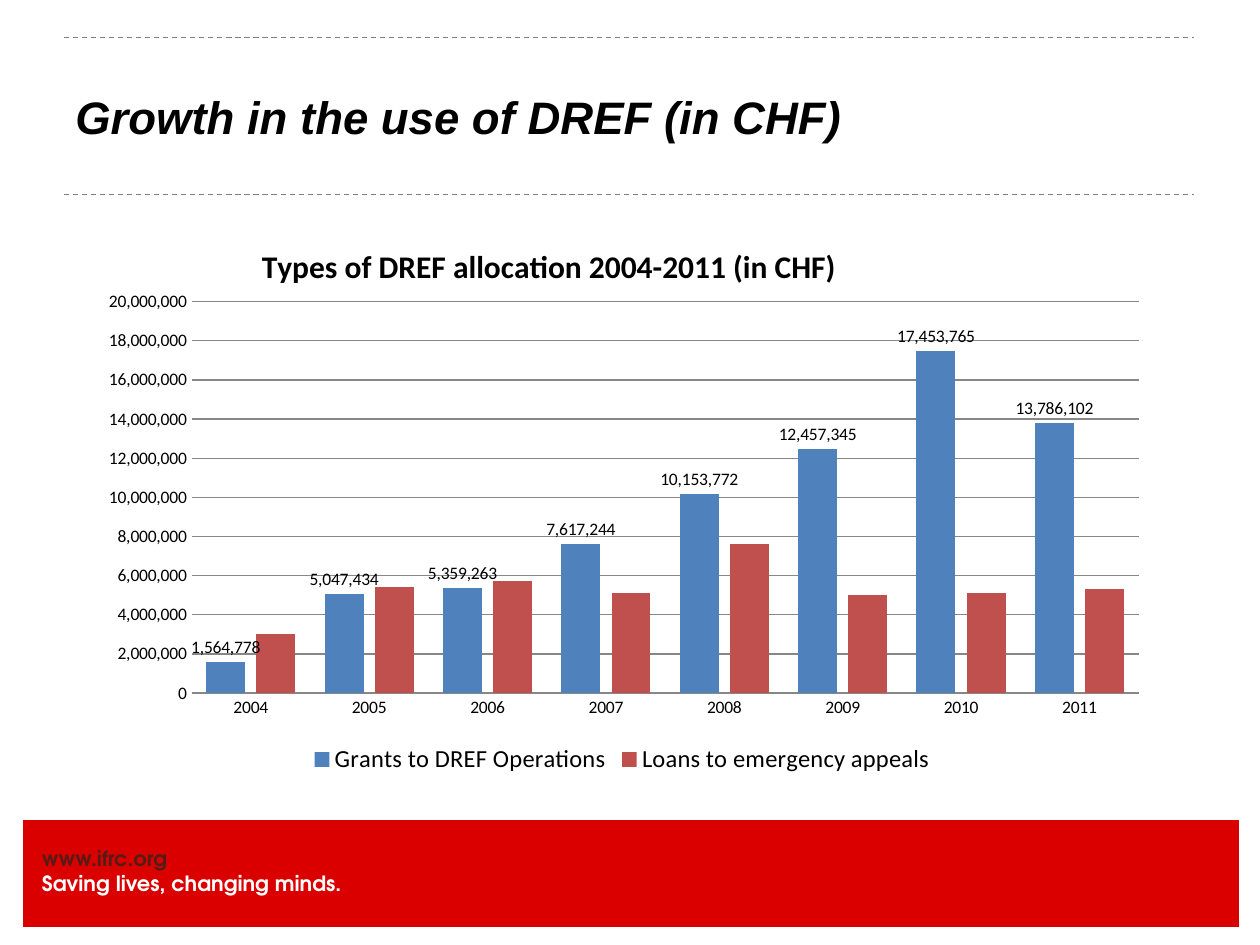
from lxml import etree
from pptx import Presentation, util as u
from pptx.chart.data import CategoryChartData
from pptx.dml.color import RGBColor
from pptx.enum import chart as charts, dml, shapes, text
from pptx.oxml.ns import qn

COLOURS = {
    "black": "000000", "white": "FFFFFF", "grey": "808080", "axis": "878787",
    "red": "DB0000", "brown": "551C15", "grants": "4F81BD", "loans": "C0504D",
}
YEARS = [str(year) for year in range(2004, 2012)]
GRANTS = [1564778, 5047434, 5359263, 7617244, 10153772, 12457345, 17453765, 13786102]
LOANS = [3000000, 5400000, 5700000, 5100000, 7600000, 5000000, 5100000, 5300000]


def colour(name):
    return RGBColor.from_string(COLOURS[name])


def points(*lengths):
    return [u.Pt(length) for length in lengths]


def format_font(font, size, face="Calibri", ink="black", bold=False, italic=False):
    font.size, font.name = u.Pt(size), face
    font.bold, font.italic = bold, italic
    font.color.rgb = colour(ink)


def write(para, content, **style):
    span = para.add_run()
    span.text = content
    format_font(span.font, **style)


def place(element, **fractions):
    """Fix a chart part at fractions of the chart area; x, y and optionally w, h."""
    layout = element.find(qn("c:layout"))
    if layout is None:
        layout = etree.Element(qn("c:layout"))
        # The layout follows the title's text, but comes first in the plot area.
        element.insert(1 if element.tag == qn("c:title") else 0, layout)
    for child in list(layout):
        layout.remove(child)
    manual = etree.SubElement(layout, qn("c:manualLayout"))
    if "w" in fractions:
        etree.SubElement(manual, qn("c:layoutTarget")).set("val", "inner")
    for side in "xy":
        etree.SubElement(manual, qn(f"c:{side}Mode")).set("val", "edge")
    for key, value in fractions.items():
        etree.SubElement(manual, qn(f"c:{key}")).set("val", str(value))


class SlideMaker:
    def __init__(self, slide):
        self.slide = slide

    def band(self, left, top, width, height):
        box = self.slide.shapes.add_shape(
            shapes.MSO_SHAPE.RECTANGLE, *points(left, top, width, height))
        box.shadow.inherit = False
        box.fill.solid()
        box.fill.fore_color.rgb = colour("red")
        box.line.color.rgb = colour("white")
        box.line.width = u.Pt(0.75)

    def rule(self, left, right, top):
        line = self.slide.shapes.add_connector(
            shapes.MSO_CONNECTOR.STRAIGHT, *points(left, top, right, top))
        line.line.color.rgb = colour("grey")
        line.line.width = u.Pt(0.75)
        line.line.dash_style = dml.MSO_LINE.DASH
        etree.SubElement(line._element.spPr, qn("a:effectLst"))

    def text(self, left, top, width, height, lines, inset=0, middle=False):
        """Add a text box; each line is a pair of wording and font style."""
        box = self.slide.shapes.add_textbox(*points(left, top, width, height))
        frame = box.text_frame
        frame.word_wrap = True
        frame.margin_left = frame.margin_right = u.Pt(inset)
        frame.margin_top = frame.margin_bottom = u.Pt(inset / 2)
        if middle:
            frame.vertical_anchor = text.MSO_ANCHOR.MIDDLE
        for index, (content, style) in enumerate(lines):
            para = frame.add_paragraph() if index else frame.paragraphs[0]
            write(para, content, **style)

    def column_chart(self, left, top, width, height, title, years, series):
        """Add clustered columns; series maps a name to values and a colour name."""
        data = CategoryChartData(number_format="#,##0")
        data.categories = years
        for name, (values, _) in series.items():
            data.add_series(name, values)
        chart = self.slide.shapes.add_chart(
            charts.XL_CHART_TYPE.COLUMN_CLUSTERED,
            *points(left, top, width, height), data).chart
        format_font(chart.font, 10)

        write(chart.chart_title.text_frame.paragraphs[0], title, size=18, bold=True)
        chart.chart_title.include_in_layout = False
        chart.has_legend = True
        chart.legend.position = charts.XL_LEGEND_POSITION.BOTTOM
        chart.legend.include_in_layout = False
        format_font(chart.legend.font, 14)

        plot = chart.plots[0]
        plot.gap_width, plot.overlap = 75, -29
        plot.vary_by_categories = False
        for column, (_, fill) in zip(plot.series, series.values()):
            column.format.fill.solid()
            column.format.fill.fore_color.rgb = colour(fill)
            column.invert_if_negative = False
        labels = plot.series[0].data_labels
        labels.show_value = True
        labels.number_format, labels.number_format_is_linked = "#,##0", False
        labels.position = charts.XL_LABEL_POSITION.OUTSIDE_END
        format_font(labels.font, 10)

        for axis in (chart.category_axis, chart.value_axis):
            axis.major_tick_mark = axis.minor_tick_mark = charts.XL_TICK_MARK.NONE
            format_font(axis.tick_labels.font, 10)
        values = chart.value_axis
        values.minimum_scale, values.maximum_scale = 0, 20000000
        values.major_unit = 2000000
        values.tick_labels.number_format = "#,##0"
        values.tick_labels.number_format_is_linked = False
        values.format.line.fill.background()
        for line in (chart.category_axis.format.line,
                     values.major_gridlines.format.line):
            line.color.rgb = colour("axis")
            line.width = u.Pt(0.75)

        place(chart.chart_title._element, x=0.16, y=0.06)
        place(plot._element.getparent(), x=0.1, y=0.17, w=0.88, h=0.68)


def main():
    deck = Presentation()
    deck.slide_width, deck.slide_height = points(720, 540)
    page = SlideMaker(deck.slides.add_slide(deck.slide_layouts[6]))

    page.band(12.5, 468, 696, 62)
    footer = dict(size=12, face="TeX Gyre Adventor", bold=True)
    page.text(24, 483, 246, 29, [
        ("www.ifrc.org", dict(footer, ink="brown")),
        ("Saving lives, changing minds.", dict(footer, ink="white")),
    ])
    for top in (21.5, 111):
        page.rule(36.5, 682.5, top)
    page.text(36, 21.5, 648, 90, [
        ("Growth in the use of DREF (in CHF)",
         dict(size=26, face="Arial", bold=True, italic=True)),
    ], inset=7.2, middle=True)
    page.column_chart(
        48, 116.5, 615, 329, "Types of DREF allocation 2004-2011 (in CHF)", YEARS,
        {"Grants to DREF Operations": (GRANTS, "grants"),
         "Loans to emergency appeals": (LOANS, "loans")})
    deck.save("out.pptx")


if __name__ == "__main__":
    main()
